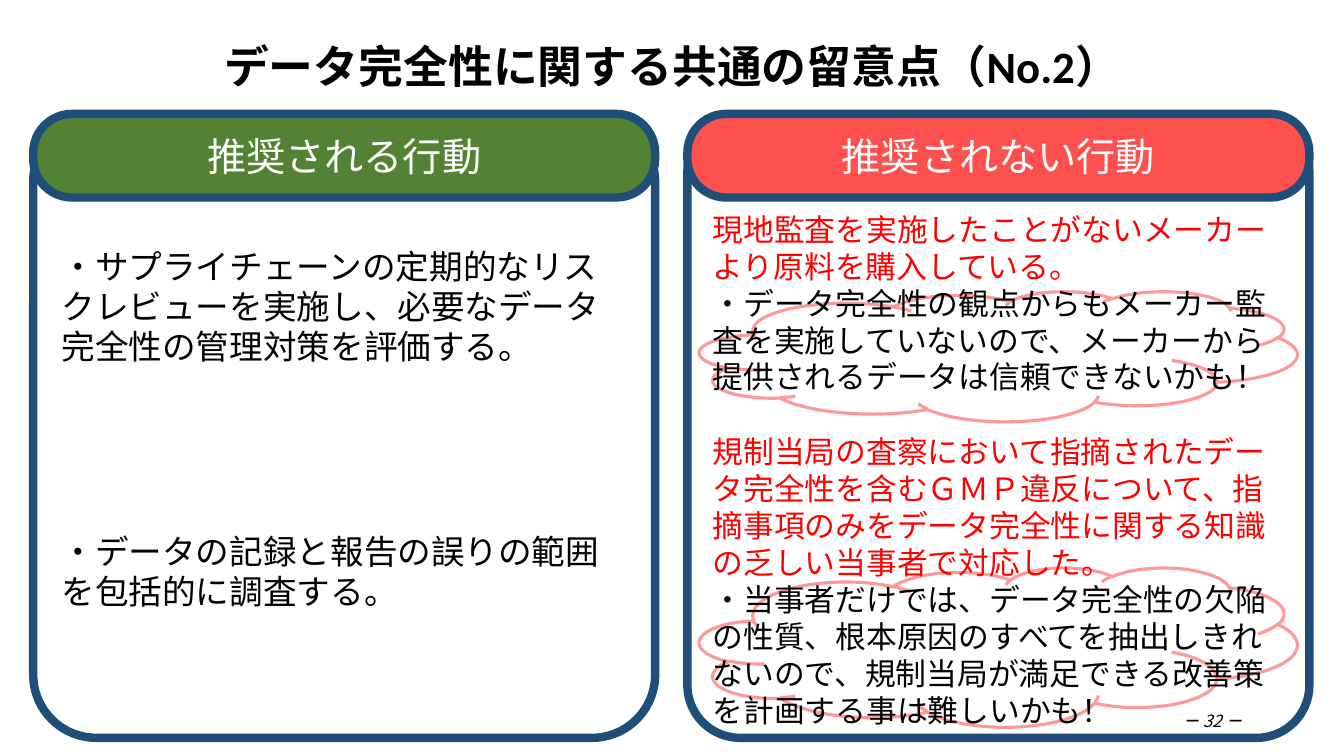
from pptx import Presentation
from pptx.dml.color import RGBColor
from pptx.enum.shapes import MSO_SHAPE as Preset
from pptx.enum.text import MSO_ANCHOR as Anchor, PP_ALIGN as Align
from pptx.util import Pt

BLACK = RGBColor(0x00, 0x00, 0x00)
WHITE = RGBColor(0xFF, 0xFF, 0xFF)
RED = RGBColor(0xFF, 0x00, 0x00)
PINK = RGBColor(0xFF, 0x99, 0x99)
NAVY = RGBColor(0x1F, 0x4E, 0x79)
GREEN = RGBColor(0x54, 0x82, 0x35)
CORAL = RGBColor(0xFF, 0x50, 0x50)

SLIDE_WIDTH, SLIDE_HEIGHT = 960, 540
PANEL_WIDTH = 444.24
LEFT_PANEL, RIGHT_PANEL = 23.76, 491.04
PANEL_TOP, PANEL_HEIGHT = 84.96, 442.08
HEADER_TOP, HEADER_HEIGHT = 81.36, 59.76

GOOD_ACTIONS = [
    ("・サプライチェーンの定期的なリスクレビューを実施し、必要なデータ完全性の管理対策を評価する。", BLACK, 0),
    ("・データの記録と報告の誤りの範囲を包括的に調査する。", BLACK, 117),
]
BAD_ACTIONS = [
    ("現地監査を実施したことがないメーカーより原料を購入している。", RED, 0),
    ("・データ完全性の観点からもメーカー監査を実施していないので、メーカーから提供されるデータは信頼できないかも！", BLACK, 0),
    ("規制当局の査察において指摘されたデータ完全性を含むＧＭＰ違反について、指摘事項のみをデータ完全性に関する知識の乏しい当事者で対応した。", RED, 26.8),
    ("・当事者だけでは、データ完全性の欠陥の性質、根本原因のすべてを抽出しきれないので、規制当局が満足できる改善策を計画する事は難しいかも！", BLACK, 0),
]


class SlideBuilder:
    """Holds the text style and the slide, and adds each kind of element."""

    def __init__(self, slide, font="Calibri"):
        self.slide = slide
        self.font = font

    def run(self, paragraph, text, size, color=BLACK, bold=False, italic=False, font=None):
        run = paragraph.add_run()
        run.text = text
        run.font.name = font or self.font
        run.font.size = Pt(size)
        run.font.color.rgb = color
        run.font.bold = bold
        run.font.italic = italic

    def text_box(self, left, top, width, height, align):
        shape = self.slide.shapes.add_textbox(Pt(left), Pt(top), Pt(width), Pt(height))
        frame = shape.text_frame
        frame.word_wrap = True
        frame.vertical_anchor = Anchor.MIDDLE
        paragraph = frame.paragraphs[0]
        paragraph.alignment = align
        return paragraph

    def shape(self, preset, left, top, width, height, line, weight, fill=None):
        shape = self.slide.shapes.add_shape(preset, Pt(left), Pt(top), Pt(width), Pt(height))
        shape.shadow.inherit = False
        if fill is None:
            shape.fill.background()
        else:
            shape.fill.solid()
            shape.fill.fore_color.rgb = fill
        shape.line.color.rgb = line
        shape.line.width = Pt(weight)
        return shape

    def cloud(self, top, height):
        self.shape(Preset.CLOUD, 499.68, top, 426.96, height, PINK, 2.25)

    def panel(self, left, corner, actions, size, fill=None, top_inset=3.6):
        shape = self.shape(Preset.ROUNDED_RECTANGLE, left, PANEL_TOP, PANEL_WIDTH,
                           PANEL_HEIGHT, NAVY, 6, fill)
        shape.adjustments[0] = corner
        frame = shape.text_frame
        frame.word_wrap = True
        frame.vertical_anchor = Anchor.MIDDLE
        frame.margin_top = Pt(top_inset)
        for index, (text, color, gap) in enumerate(actions):
            paragraph = frame.add_paragraph() if index else frame.paragraphs[0]
            paragraph.alignment = Align.LEFT
            paragraph.space_before = Pt(gap)
            self.run(paragraph, text, size, color)

    def header(self, left, text, fill):
        shape = self.shape(Preset.ROUNDED_RECTANGLE, left, HEADER_TOP, PANEL_WIDTH,
                           HEADER_HEIGHT, NAVY, 6, fill)
        shape.adjustments[0] = 0.463
        shape.text_frame.vertical_anchor = Anchor.MIDDLE
        paragraph = shape.text_frame.paragraphs[0]
        paragraph.alignment = Align.CENTER
        self.run(paragraph, text, 28, WHITE)

    def title(self, text):
        paragraph = self.text_box(0, 13.68, SLIDE_WIDTH, 71.28, Align.CENTER)
        paragraph.line_spacing = 0.9
        self.run(paragraph, text, 32, bold=True)

    def page_number(self, number):
        paragraph = self.text_box(678.24, 500.4, 216, 28.8, Align.RIGHT)
        for text, bold in (("－ ", True), (number, False), (" －", True)):
            self.run(paragraph, text, 12, bold=bold, italic=True, font="Noto Sans CJK JP")


def main():
    presentation = Presentation()
    presentation.slide_width = Pt(SLIDE_WIDTH)
    presentation.slide_height = Pt(SLIDE_HEIGHT)
    builder = SlideBuilder(presentation.slides.add_slide(presentation.slide_layouts[6]))
    builder.cloud(208.08, 92.88)
    builder.cloud(405.36, 113.76)
    builder.title("データ完全性に関する共通の留意点（No.2）")
    builder.panel(LEFT_PANEL, 0.102, GOOD_ACTIONS, 24, fill=WHITE)
    builder.panel(RIGHT_PANEL, 0.085, BAD_ACTIONS, 22, top_inset=62)
    builder.header(LEFT_PANEL, "推奨される行動", GREEN)
    builder.header(RIGHT_PANEL, "推奨されない行動", CORAL)
    builder.page_number("32")
    presentation.save("out.pptx")


if __name__ == "__main__":
    main()
